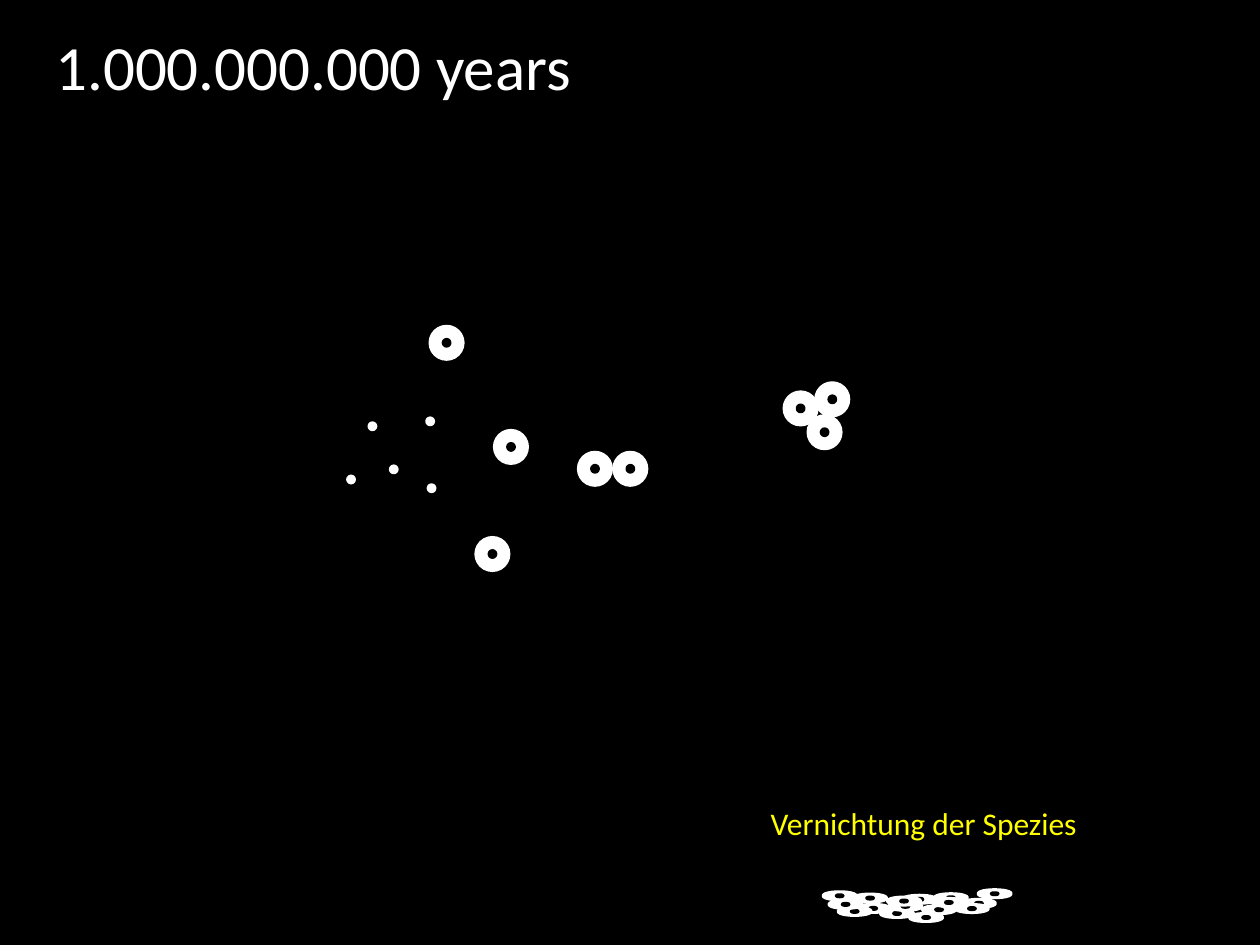
from pptx import Presentation
from pptx.dml.color import RGBColor
from pptx.enum.shapes import MSO_SHAPE as Shape
from pptx.enum.text import MSO_ANCHOR as Anchor, MSO_AUTO_SIZE as AutoSize, PP_ALIGN as Align
from pptx.util import Pt

BLACK = RGBColor(0x00, 0x00, 0x00)
WHITE = RGBColor(0xFF, 0xFF, 0xFF)
YELLOW = RGBColor(0xFF, 0xFF, 0x00)

# Diameters in points; dead cells lie squashed on the ground
CELL, NUCLEUS = 18.6, 3.6
FLAT_CELL, FLAT_NUCLEUS = 4.3, 0.83

# Centres in points
SPORES = [(225, 268.2), (245.8, 240.8), (200.6, 274), (212.8, 243.6), (246.6, 279)]
LIVING_CELLS = [(292, 255.4), (340, 267.9), (255.2, 195.9), (281.4, 316.6), (360.2, 267.9)]
CLUSTER_CELLS = [(457.5, 233.4), (471.2, 247), (475.6, 228.2)]
DEAD_CELLS = [
    (499, 519.1), (512.6, 522), (517.4, 517.9), (525.4, 513.9),
    (543.4, 513), (559.4, 516.2), (536.6, 519.8), (529.2, 524.3),
    (542.2, 515.7), (555.4, 519.2), (568.4, 510.7), (488.4, 520.8),
    (483.2, 516.8), (497.2, 513.2), (516.6, 514.9), (479.8, 511.9),
]


def add_dot(group, center, width, height, color):
    x, y = center
    dot = group.shapes.add_shape(
        Shape.OVAL, Pt(x - width / 2), Pt(y - height / 2), Pt(width), Pt(height))
    dot.shadow.inherit = False
    dot.fill.solid()
    dot.fill.fore_color.rgb = color
    dot.line.color.rgb = color
    dot.line.width = Pt(2)


def write_text(shape, text, size, color, anchor, wrap, auto_size):
    frame = shape.text_frame
    frame.word_wrap = wrap
    frame.auto_size = auto_size
    frame.vertical_anchor = anchor
    paragraph = frame.paragraphs[0]
    paragraph.alignment = Align.LEFT
    run = paragraph.add_run()
    run.text = text
    run.font.name = "Calibri"
    run.font.size = Pt(size)
    run.font.color.rgb = color


presentation = Presentation()
presentation.slide_width = Pt(720)
presentation.slide_height = Pt(540)
slide = presentation.slides.add_slide(presentation.slide_layouts[5])
slide.background.fill.solid()
slide.background.fill.fore_color.rgb = BLACK

title = slide.shapes.title
title.left, title.top, title.width, title.height = Pt(24.5), Pt(21.6), Pt(332), Pt(31.7)
title.fill.solid()
title.fill.fore_color.rgb = BLACK
title.line.color.rgb = BLACK
title.line.width = Pt(2)
write_text(title, "1.000.000.000 years", size=36, color=WHITE,
           anchor=Anchor.MIDDLE, wrap=True, auto_size=AutoSize.NONE)

# Spores and living cells share one group; each cluster cell has its own
colony = slide.shapes.add_group_shape()
for center in SPORES:
    add_dot(colony, center, NUCLEUS, NUCLEUS, WHITE)
for center in LIVING_CELLS + CLUSTER_CELLS:
    group = colony if center in LIVING_CELLS else slide.shapes.add_group_shape()
    add_dot(group, center, CELL, CELL, WHITE)
    add_dot(group, center, NUCLEUS, NUCLEUS, BLACK)

graveyard = slide.shapes.add_group_shape()
for center in DEAD_CELLS:
    add_dot(graveyard, center, CELL, FLAT_CELL, WHITE)
    add_dot(graveyard, center, NUCLEUS, FLAT_NUCLEUS, BLACK)

caption = slide.shapes.add_textbox(Pt(433.3), Pt(456), Pt(196), Pt(29))
write_text(caption, "Vernichtung der Spezies", size=18, color=YELLOW,
           anchor=Anchor.TOP, wrap=False, auto_size=AutoSize.SHAPE_TO_FIT_TEXT)

presentation.save("out.pptx")
